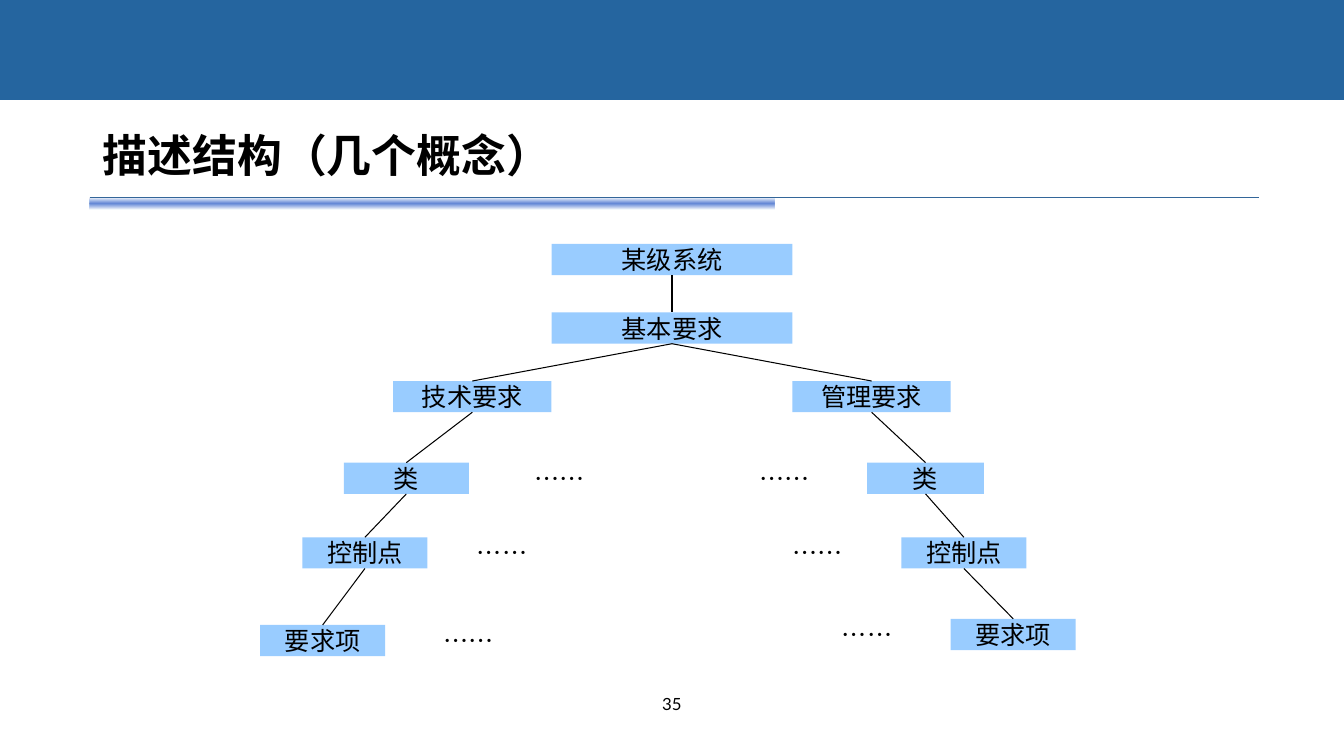
"""Build the slide that shows the requirement hierarchy as a tree."""
from dataclasses import dataclass

from lxml import etree
from pptx import Presentation
from pptx import util as u
from pptx.dml.color import RGBColor
from pptx.enum import lang, shapes, text
from pptx.oxml import parse_xml
from pptx.oxml.ns import nsdecls, qn

CJK, LATIN = "Noto Sans CJK SC", "Lato"
BLACK, NODE_FILL, BANNER, RULE = "000000", "99CCFF", "25659F", "336699"
BOX_H = 0.31
DOTS_W = 1.32


@dataclass
class Node:
    key: str
    label: str
    left: float
    top: float
    width: float = 1.24
    parent: str = ""


@dataclass
class Dots:
    left: float
    top: float


NODES = [
    Node("system", "某级系统", 5.47, 2.42, 2.39),
    Node("basic", "基本要求", 5.47, 3.1, 2.39, "system"),
    Node("tech", "技术要求", 3.9, 3.78, 1.57, "basic"),
    Node("tech_class", "类", 3.41, 4.59, parent="tech"),
    Node("tech_point", "控制点", 3, 5.33, parent="tech_class"),
    Node("tech_item", "要求项", 2.58, 6.2, parent="tech_point"),
    Node("mgmt", "管理要求", 7.86, 3.78, 1.57, "basic"),
    Node("mgmt_class", "类", 8.6, 4.59, 1.16, "mgmt"),
    Node("mgmt_point", "控制点", 8.94, 5.33, parent="mgmt_class"),
    Node("mgmt_item", "要求项", 9.43, 6.14, parent="mgmt_point"),
]
DOTS = [Dots(4.89, 4.59), Dots(4.32, 5.33), Dots(3.99, 6.2),
        Dots(7.12, 4.59), Dots(7.45, 5.33), Dots(7.94, 6.14)]


def rgb(value: str) -> RGBColor:
    """Turn a hex string into a colour."""
    return RGBColor.from_string(value)


def apply(target, **values) -> None:
    """Set each given attribute on the target."""
    for name, value in values.items():
        setattr(target, name, value)


def box(left: float, top: float, width: float, height: float) -> list:
    """Convert a rectangle in inches to lengths."""
    return [u.Inches(v) for v in (left, top, width, height)]


def write(sp, words: str, size: float = 18, font: str = CJK, bold: bool = False,
          align=text.PP_ALIGN.CENTER, anchor=text.MSO_ANCHOR.MIDDLE, wrap: bool = False) -> None:
    """Write one formatted line of text into a shape."""
    tf = sp.text_frame
    apply(tf, word_wrap=wrap, vertical_anchor=anchor)
    p = tf.paragraphs[0]
    p.alignment = align
    r = p.add_run()
    r.text = words
    apply(r.font, size=u.Pt(size), name=font, bold=bold,
          language_id=lang.MSO_LANGUAGE_ID.SIMPLIFIED_CHINESE)
    r.font.color.rgb = rgb(BLACK)
    etree.SubElement(r.font._element, qn("a:ea")).set("typeface", font)


def add_block(slide, area: list, color: str):
    """Add a plain filled rectangle."""
    sp = slide.shapes.add_shape(shapes.MSO_SHAPE.RECTANGLE, *area)
    sp.shadow.inherit = False
    sp.fill.solid()
    sp.fill.fore_color.rgb = rgb(color)
    sp.line.fill.background()
    return sp


def add_line(slide, start: tuple, end: tuple, color: str):
    """Add a thin straight connector without a shadow."""
    points = [u.Inches(v) for v in (*start, *end)]
    line = slide.shapes.add_connector(shapes.MSO_CONNECTOR.STRAIGHT, *points)
    line.line.color.rgb = rgb(color)
    line.line.width = u.Pt(0.75)
    etree.SubElement(line._element.spPr, qn("a:effectLst"))
    return line


def add_title_rule(slide) -> None:
    """Draw the fading bar and the thin rule below the title."""
    bar = add_block(slide, box(0.89, 1.96, 6.79, 0.12), "6387D6")
    stops = "".join(
        f'<a:gs pos="{pos}"><a:srgbClr val="{color}"><a:alpha val="{alpha}"/></a:srgbClr></a:gs>'
        for pos, color, alpha in ((0, "5781D5", 0), (50000, "6387D6", 100000), (100000, "5781D5", 0)))
    solid = bar._element.spPr.find(qn("a:solidFill"))
    solid.getparent().replace(solid, parse_xml(
        f'<a:gradFill {nsdecls("a")} rotWithShape="1"><a:gsLst>{stops}</a:gsLst>'
        '<a:lin ang="5400000" scaled="0"/></a:gradFill>'))
    add_line(slide, (0.89, 1.96), (12.49, 1.96), RULE)


def add_title(slide) -> None:
    """Place and format the title placeholder."""
    title = slide.shapes.title
    left, top, width, height = box(0.92, 0.43, 10.25, 1.37)
    apply(title, left=left, top=top, width=width, height=height)
    apply(title.text_frame, margin_top=0, margin_bottom=0, auto_size=text.MSO_AUTO_SIZE.NONE)
    write(title, "描述结构（几个概念）", 32, bold=True, align=text.PP_ALIGN.LEFT,
          anchor=text.MSO_ANCHOR.BOTTOM, wrap=True)


def add_tree(slide) -> None:
    """Draw the nodes, their links and the ellipses."""
    placed = {}
    for node in NODES:
        sp = add_block(slide, box(node.left, node.top, node.width, BOX_H), NODE_FILL)
        write(sp, node.label)
        placed[node.key] = sp
        if node.parent:
            link = add_line(slide, (0, 0), (1, 1), BLACK)
            link.begin_connect(placed[node.parent], 2)
            link.end_connect(sp, 0)
    for dots in DOTS:
        write(slide.shapes.add_textbox(*box(dots.left, dots.top, DOTS_W, BOX_H)), "……")


def main() -> None:
    """Create the presentation and save it."""
    prs = Presentation()
    apply(prs, slide_width=u.Inches(13.33), slide_height=u.Inches(7.5))
    slide = prs.slides.add_slide(prs.slide_layouts[5])
    add_title_rule(slide)
    add_block(slide, box(0, 0, 13.33, 0.99), BANNER)
    add_title(slide)
    add_tree(slide)
    number = slide.shapes.add_textbox(*box(5.08, 6.83, 3.17, 0.52))
    write(number, "35", 12, LATIN, anchor=text.MSO_ANCHOR.TOP, wrap=True)
    prs.save("out.pptx")


if __name__ == "__main__":
    main()
